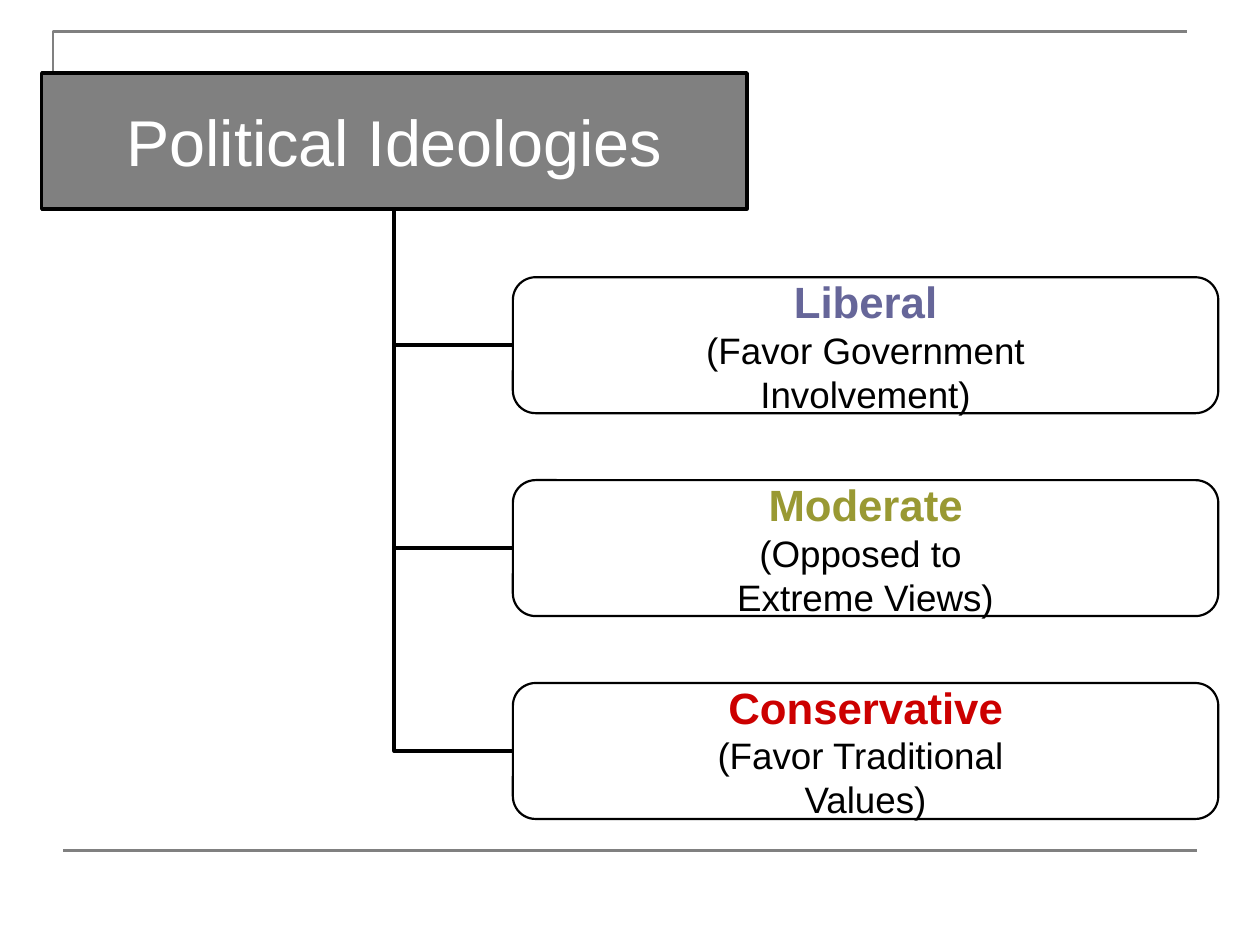
from dataclasses import dataclass

from lxml.etree import SubElement
from pptx import Presentation
from pptx.dml.color import RGBColor
from pptx.enum.shapes import MSO_CONNECTOR, MSO_SHAPE
from pptx.enum.text import MSO_ANCHOR, MSO_AUTO_SIZE, PP_ALIGN
from pptx.oxml.ns import qn
from pptx.util import Cm, Pt

TITLE = "Political Ideologies"
IDEOLOGIES = [
    ("Liberal", "666699", ["(Favor Government", "Involvement)"]),
    ("Moderate", "999933", ["(Opposed to ", "Extreme Views)"]),
    ("Conservative", "CC0000", ["(Favor Traditional ", "Values)"]),
]


@dataclass(frozen=True)
class Theme:
    font: str = "Arial"
    gray: str = "808080"
    white: str = "FFFFFF"
    black: str = "000000"
    title_size: float = 37
    name_size: float = 25
    detail_size: float = 21
    frame_line: float = 1.5
    title_line: float = 2
    box_line: float = 1.25
    branch_line: float = 2.25
    corner: float = 0.167


THEME = Theme()
BOX_WIDTH, BOX_HEIGHT = 14.22, 2.74
TITLE_LEFT, TITLE_TOP = 0.84, 1.47
BOX_LEFT, BOX_TOP, BOX_STEP = 10.34, 5.59, 4.09
LEFT_SITE, BOTTOM_SITE = 1, 2


def set_line(shape, color, width):
    shape.line.color.rgb = RGBColor.from_string(color)
    shape.line.width = Pt(width)


def set_fill(shape, color):
    shape.fill.solid()
    shape.fill.fore_color.rgb = RGBColor.from_string(color)


def write_lines(shape, lines):
    frame = shape.text_frame
    frame.text = "\n".join(text for text, *_ in lines)
    frame.word_wrap = True
    frame.auto_size = MSO_AUTO_SIZE.NONE
    frame.vertical_anchor = MSO_ANCHOR.MIDDLE
    frame.margin_left = frame.margin_right = 0
    frame.margin_top = frame.margin_bottom = 0
    for paragraph, (_, size, color, bold) in zip(frame.paragraphs, lines):
        paragraph.alignment = PP_ALIGN.CENTER
        paragraph.line_spacing = 1.0
        paragraph.space_before = Pt(0)
        for run in paragraph.runs:
            run.font.name = THEME.font
            run.font.size = Pt(size)
            run.font.bold = bold
            run.font.color.rgb = RGBColor.from_string(color)


def add_line(slide, kind, start, end, color, width):
    line = slide.shapes.add_connector(kind, *map(Cm, start), *map(Cm, end))
    set_line(line, color, width)
    SubElement(line._element.spPr, qn("a:effectLst"))
    return line


def add_frame(slide):
    builder = slide.shapes.build_freeform(Cm(1.07), Cm(2.34))
    builder.add_line_segments(
        [(Cm(1.07), Cm(0.64)), (Cm(23.93), Cm(0.64))], close=False
    )
    corner = builder.convert_to_shape()
    corner.shadow.inherit = False
    corner.fill.background()
    set_line(corner, THEME.gray, THEME.frame_line)
    add_line(slide, MSO_CONNECTOR.STRAIGHT, (1.27, 17.15), (24.13, 17.15),
             THEME.gray, THEME.frame_line)


def format_title(slide):
    title = slide.shapes.title
    title.left, title.top = Cm(TITLE_LEFT), Cm(TITLE_TOP)
    title.width, title.height = Cm(BOX_WIDTH), Cm(BOX_HEIGHT)
    geometry = SubElement(title._element.spPr, qn("a:prstGeom"), prst="roundRect")
    adjustments = SubElement(geometry, qn("a:avLst"))
    SubElement(adjustments, qn("a:gd"), name="adj",
               fmla=f"val {round(THEME.corner * 100000)}")
    set_fill(title, THEME.gray)
    set_line(title, THEME.black, THEME.title_line)
    write_lines(title, [(TITLE, THEME.title_size, THEME.white, False)])
    slide.shapes._spTree.append(title._element)
    return title


def add_ideology(slide, top, name, color, details):
    box = slide.shapes.add_shape(
        MSO_SHAPE.ROUNDED_RECTANGLE,
        Cm(BOX_LEFT), Cm(top), Cm(BOX_WIDTH), Cm(BOX_HEIGHT),
    )
    box.adjustments[0] = THEME.corner
    box.shadow.inherit = False
    set_fill(box, THEME.white)
    set_line(box, THEME.black, THEME.box_line)
    write_lines(box, [(name, THEME.name_size, color, True)] + [
        (detail, THEME.detail_size, THEME.black, False) for detail in details
    ])
    return box


def add_branch(slide, box, title, top):
    start = (BOX_LEFT, top + BOX_HEIGHT / 2)
    end = (TITLE_LEFT + BOX_WIDTH / 2, TITLE_TOP + BOX_HEIGHT)
    branch = add_line(slide, MSO_CONNECTOR.ELBOW, start, end,
                      THEME.black, THEME.branch_line)
    branch._element.spPr.find(qn("a:prstGeom")).set("prst", "bentConnector2")
    branch.begin_connect(box, LEFT_SITE)
    branch.end_connect(title, BOTTOM_SITE)


def main():
    presentation = Presentation()
    presentation.slide_width, presentation.slide_height = Cm(25.4), Cm(19.05)
    slide = presentation.slides.add_slide(
        presentation.slide_layouts.get_by_name("Title Only")
    )
    add_frame(slide)
    title = format_title(slide)
    for index, ideology in enumerate(IDEOLOGIES):
        top = BOX_TOP + index * BOX_STEP
        box = add_ideology(slide, top, *ideology)
        add_branch(slide, box, title, top)
    presentation.save("out.pptx")


if __name__ == "__main__":
    main()
